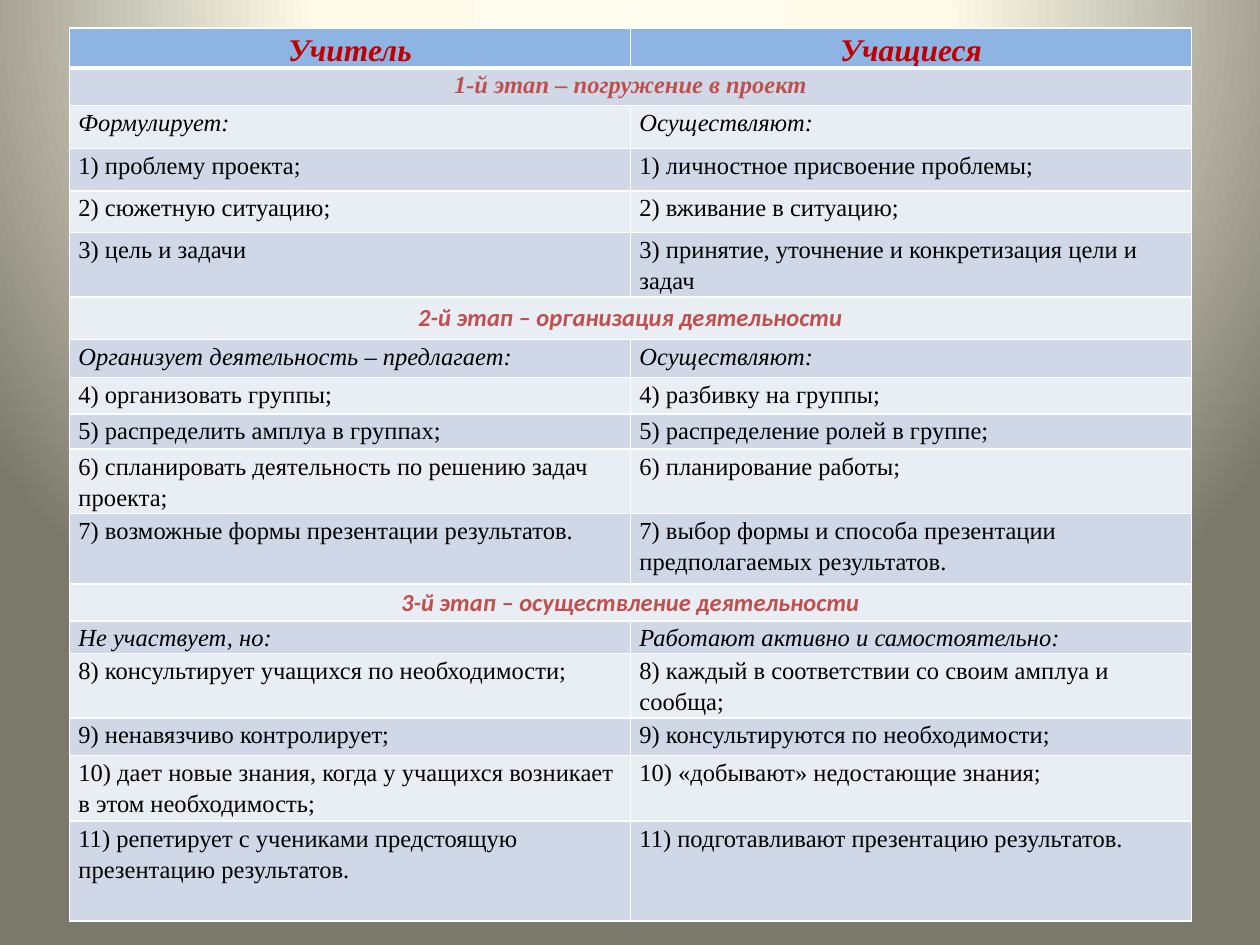
from pptx import Presentation
from pptx.dml.color import RGBColor
from pptx.enum.text import PP_ALIGN
from pptx.oxml import parse_xml
from pptx.oxml.ns import nsdecls
from pptx.util import Cm, Pt


def color(value):
    return RGBColor.from_string(value)


def add_border(cell, position, side, width):
    line = parse_xml(
        f'<a:ln{side} {nsdecls("a")} w="{Pt(width)}"><a:solidFill>'
        f'<a:srgbClr val="FFFFFF"/></a:solidFill></a:ln{side}>')
    cell._tc.get_or_add_tcPr().insert(position, line)


deck = Presentation()
deck.slide_width, deck.slide_height = Cm(25.4), Cm(19.05)
page = deck.slides.add_slide(deck.slide_layouts[6])

# Background: circular gradient centred above the slide
stops = "".join(
    f'<a:gs pos="{percent * 1000}"><a:srgbClr val="{value}"/></a:gs>'
    for percent, value in [(0, "FEFCEE"), (40, "FDFAEA"), (100, "7B796B")])
page._element.cSld.insert(0, parse_xml(
    f'<p:bg {nsdecls("p", "a")}><p:bgPr><a:gradFill rotWithShape="1">'
    f'<a:gsLst>{stops}</a:gsLst><a:path path="circle">'
    '<a:fillToRect l="50000" t="-80000" r="50000" b="180000"/></a:path>'
    '</a:gradFill><a:effectLst/></p:bgPr></p:bg>'))

# Rows: kind, height in cm, texts
rows = [
    ("header", 0.76, "Учитель", "Учащиеся"),
    ("stage", 0.76, "1-й этап – погружение в проект"),
    ("lead", 0.86, "Формулирует:", "Осуществляют:"),
    ("item", 0.86, "1) проблему проекта;", "1) личностное присвоение проблемы;"),
    ("item", 0.84, "2) сюжетную ситуацию;", "2) вживание в ситуацию;"),
    ("item", 1.3, "3) цель и задачи",
     "3) принятие, уточнение и конкретизация цели и задач"),
    ("stage", 0.84, "2-й этап – организация деятельности"),
    ("lead", 0.76, "Организует деятельность – предлагает:", "Осуществляют:"),
    ("item", 0.74, "4) организовать группы;", "4) разбивку на группы;"),
    ("item", 0.71, "5) распределить амплуа в группах;",
     "5) распределение ролей в группе;"),
    ("item", 1.3, "6) спланировать деятельность по решению задач проекта;",
     "6) планирование работы;"),
    ("item", 1.42, "7) возможные формы презентации результатов.",
     "7) выбор формы и способа презентации предполагаемых результатов."),
    ("stage", 0.74, "3-й этап – осуществление деятельности"),
    ("lead", 0.66, "Не участвует, но:", "Работают активно и самостоятельно:"),
    ("item", 1.3, "8) консультирует учащихся по необходимости;",
     "8) каждый в соответствии со своим амплуа и сообща;"),
    ("item", 0.76, "9) ненавязчиво контролирует;",
     "9) консультируются по необходимости;"),
    ("item", 1.32,
     "10) дает новые знания, когда у учащихся возникает в этом необходимость;",
     "10) «добывают» недостающие знания;"),
    ("item", 2.01,
     "11) репетирует с учениками предстоящую презентацию результатов.",
     "11) подготавливают презентацию результатов."),
]
# Kind: size, colour, bold, italic
styles = {
    "header": (18, "C00000", True, True),
    "stage": (14, "C0504D", True, True),
    "lead": (14, "000000", False, True),
    "item": (14, "000000", False, False),
}

# Table
total_height = sum(row[1] for row in rows)
table = page.shapes.add_table(
    len(rows), 2, Cm(1.4), Cm(0.56), Cm(22.62), Cm(total_height)).table
table.first_row = table.horz_banding = False
for column in table.columns:
    column.width = Cm(11.31)

for index, (kind, height, *texts) in enumerate(rows):
    table.rows[index].height = Cm(height)
    size, ink, bold, italic = styles[kind]
    if kind == "stage":
        table.cell(index, 0).merge(table.cell(index, 1))

    # Fill and borders, with a heavy rule under the header
    band = "8EB4E3" if kind == "header" else ("E9EDF4", "D0D8E8")[index % 2]
    widths = {"L": 1, "R": 1, "T": 3 if index == 1 else 1,
              "B": 3 if index == 0 else 1}
    for cell in table.rows[index].cells:
        cell.fill.solid()
        cell.fill.fore_color.rgb = color(band)
        for position, (side, width) in enumerate(widths.items()):
            add_border(cell, position, side, width)

    # Text; the second stage row keeps the default margins and spacing
    roomy = texts[0].startswith("2-й")
    for number, text in enumerate(texts):
        cell = table.cell(index, number)
        para = cell.text_frame.paragraphs[0]
        if not roomy:
            cell.margin_left = cell.margin_right = Cm(0.18)
            cell.margin_top = cell.margin_bottom = 0
            para.line_spacing = 1.15
        if kind in ("header", "stage"):
            para.alignment = PP_ALIGN.CENTER
        span = para.add_run()
        span.text = text
        font = span.font
        font.name = ("Calibri" if kind == "stage" and index > 1
                     else "Times New Roman")
        font.size, font.bold, font.italic = Pt(size), bold, italic
        font.color.rgb = color(ink)

deck.save("out.pptx")
